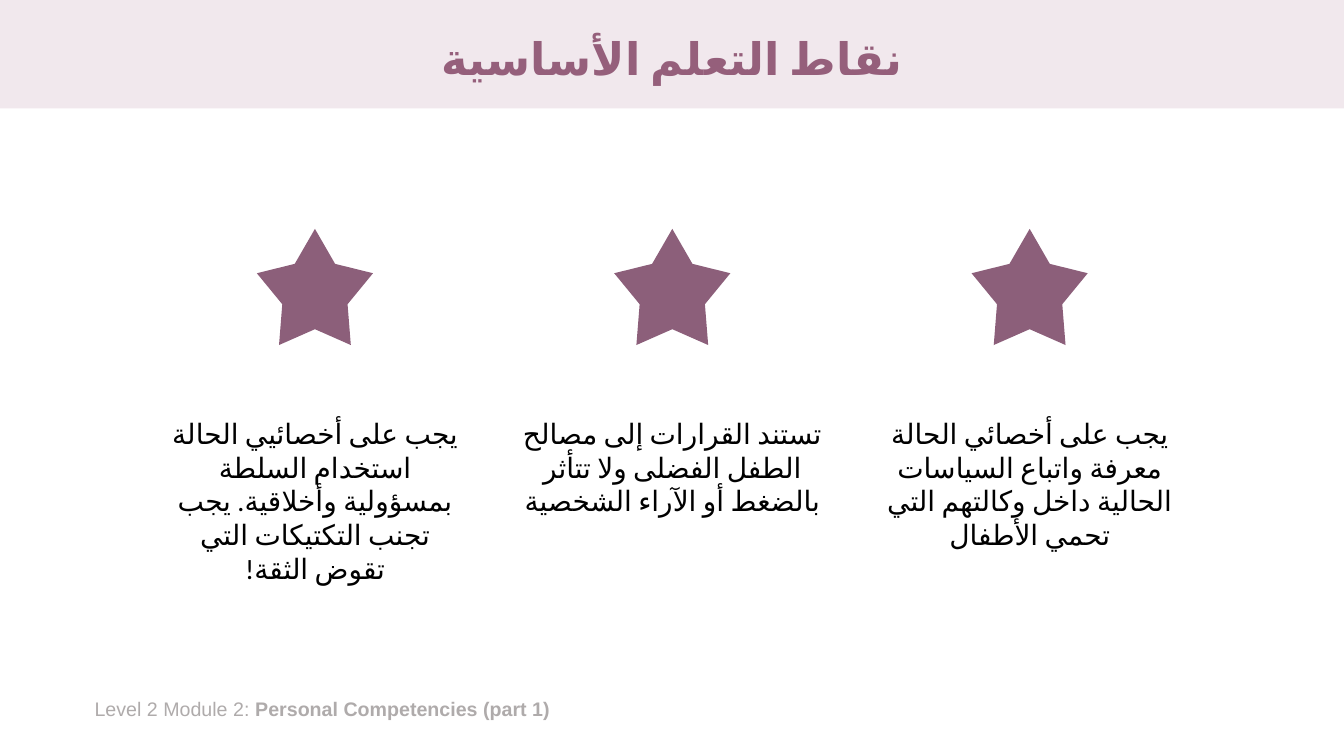
from pptx import Presentation
from pptx.dml.color import RGBColor
from pptx.enum.shapes import MSO_SHAPE as SHAPE
from pptx.enum.text import MSO_ANCHOR as ANCHOR, MSO_AUTO_SIZE as AUTO, PP_ALIGN as ALIGN
from pptx.oxml.ns import qn
from pptx.util import Pt

COLORS = {
    "band": "F1E8ED",
    "title": "955F7B",
    "star": "8C5F7A",
    "body": "000000",
    "footer": "AFABAB",
}
SLIDE_W, SLIDE_H = 960, 540
STAR = 83
COLUMN_W, COLUMN_STEP = 228, 255.25
POINTS = [
    "يجب على أخصائيي الحالة استخدام السلطة بمسؤولية وأخلاقية. يجب تجنب التكتيكات التي تقوض الثقة!",
    "تستند القرارات إلى مصالح الطفل الفضلى ولا تتأثر بالضغط أو الآراء الشخصية",
    "يجب على أخصائي الحالة معرفة واتباع السياسات الحالية داخل وكالتهم التي تحمي الأطفال",
]


def add_run(p, text, font, size, color, bold=False):
    r = p.add_run()
    r.text = text
    r.font.name = font
    r.font.size = Pt(size)
    r.font.bold = bold
    r.font.color.rgb = RGBColor.from_string(COLORS[color])
    return r


def add_arabic(p, text, size, color, bold=False):
    """Fill a centred right-to-left paragraph."""
    p.alignment = ALIGN.CENTER
    p._p.get_or_add_pPr().set("rtl", "1")
    r = add_run(p, text, "Calibri", size, color, bold)
    rpr = r._r.get_or_add_rPr()
    rpr.set("lang", "ar-SA")
    cs = rpr.makeelement(qn("a:cs"), {"typeface": "Calibri"})
    rpr.append(cs)


def add_plain_shape(s, kind, x, y, w, h, color):
    sp = s.shapes.add_shape(kind, Pt(x), Pt(y), Pt(w), Pt(h))
    sp.shadow.inherit = False
    sp.fill.solid()
    sp.fill.fore_color.rgb = RGBColor.from_string(COLORS[color])
    sp.line.fill.background()
    return sp


def add_text_box(s, x, y, w, h):
    tf = s.shapes.add_textbox(Pt(x), Pt(y), Pt(w), Pt(h)).text_frame
    tf.word_wrap = True
    tf.auto_size = AUTO.SHAPE_TO_FIT_TEXT
    return tf.paragraphs[0]


def add_header(s, x, y, w, h):
    title = s.shapes.title
    band = add_plain_shape(s, SHAPE.RECTANGLE, x, y, w, h, "band")
    title._element.addprevious(band._element)  # band lies behind the title
    title.left, title.top = Pt(x + 66), Pt(y + 9.5)
    title.width, title.height = Pt(w - 132), Pt(h - 9.5)
    tf = title.text_frame
    tf.word_wrap = True
    tf.auto_size = AUTO.NONE
    tf.vertical_anchor = ANCHOR.MIDDLE
    p = tf.paragraphs[0]
    p.line_spacing = 0.9
    add_arabic(p, "نقاط التعلم الأساسية", 32, "title", bold=True)


def add_point(s, x, y, w, text):
    """Draw one column: a star with its text below."""
    star = add_plain_shape(s, SHAPE.STAR_5_POINT, x + (w - STAR) / 2, y, STAR, STAR, "star")
    star.adjustments[0] = 0.281
    add_arabic(add_text_box(s, x, y + 130.5, w, 80), text, 20, "body")


def add_footer(s, x, y, w, h):
    p = add_text_box(s, x, y, w, h)
    add_run(p, "Level 2 Module 2: ", "Arial", 14, "footer")
    add_run(p, "Personal Competencies (part 1)", "Arial", 14, "footer", bold=True)


def main():
    prs = Presentation()
    prs.slide_width, prs.slide_height = Pt(SLIDE_W), Pt(SLIDE_H)
    s = prs.slides.add_slide(prs.slide_layouts[5])
    add_header(s, 0, 0, SLIDE_W, 77.5)
    for i, text in enumerate(POINTS):
        add_point(s, 111 + i * COLUMN_STEP, 163.5, COLUMN_W, text)
    add_footer(s, 60.5, 494.5, 817, 24.5)
    prs.save("out.pptx")


if __name__ == "__main__":
    main()
